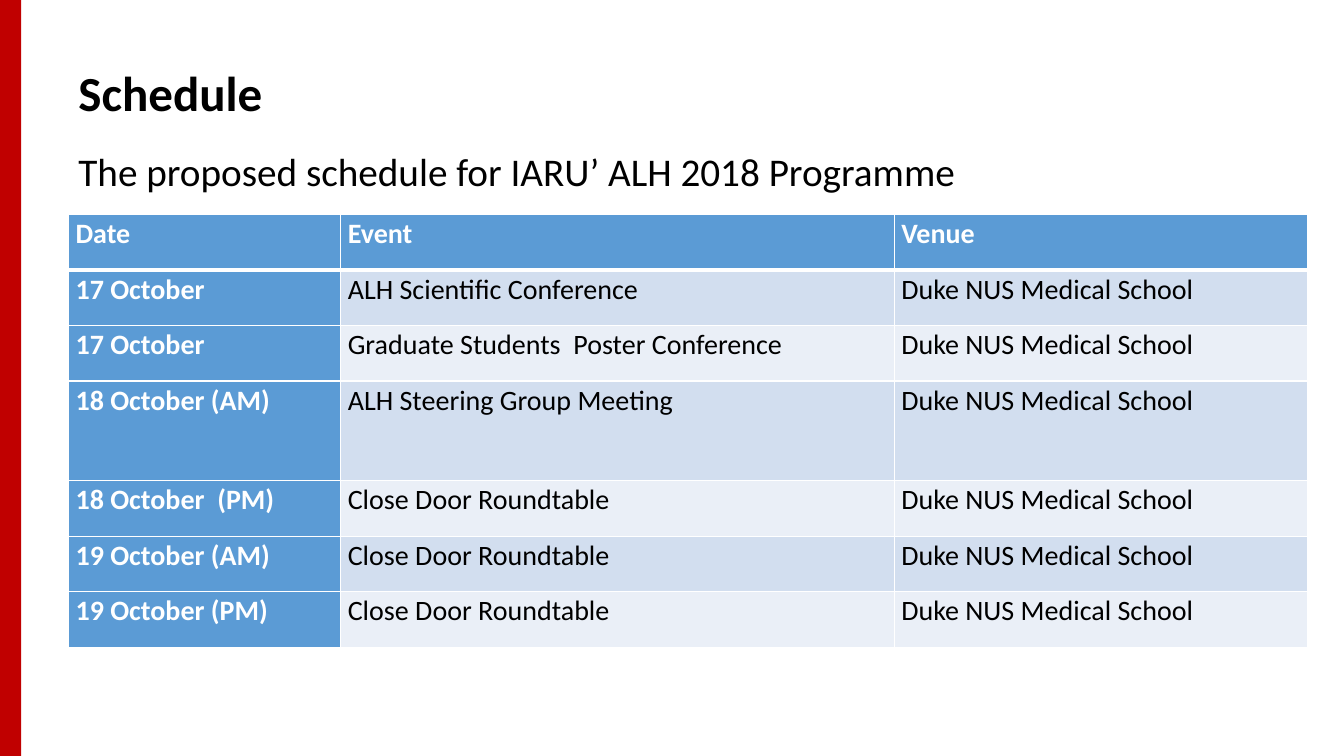
from lxml import etree
from pptx import Presentation
from pptx import util as u
from pptx.dml.color import RGBColor
from pptx.enum import shapes, text
from pptx.oxml import ns

RED = RGBColor(0xC0, 0x00, 0x00)
BLUE = RGBColor(0x5B, 0x9B, 0xD5)
BANDS = RGBColor(0xD2, 0xDE, 0xEF), RGBColor(0xEA, 0xEF, 0xF7)
WHITE = RGBColor(0xFF, 0xFF, 0xFF)
BLACK = RGBColor(0x00, 0x00, 0x00)

VENUE = "Duke NUS Medical School"
TALK = "Close Door Roundtable"
ROWS = [
    ("Date", "Event", "Venue"),
    ("17 October", "ALH Scientific Conference", VENUE),
    ("17 October", "Graduate Students  Poster Conference", VENUE),
    ("18 October (AM)", "ALH Steering Group Meeting", VENUE),
    ("18 October  (PM)", TALK, VENUE),
    ("19 October (AM)", TALK, VENUE),
    ("19 October (PM)", TALK, VENUE),
]
WIDTHS = 2.7, 5.49, 4.1
HEIGHTS = [0.99 if row[0] == "18 October (AM)" else 0.55 for row in ROWS]


def write(frame, words, size=20, color=BLACK, bold=False, space=1.07):
    par = frame.paragraphs[0]
    par.line_spacing = space
    run = par.add_run()
    run.text = words
    font = run.font
    font.name = "Calibri"
    font.size = u.Pt(size)
    font.bold = bold
    font.color.rgb = color


def edge(cell, side, width):
    props = cell._tc.get_or_add_tcPr()
    line = etree.SubElement(props, ns.qn("a:ln" + side), w=str(u.Pt(width)))
    fill = etree.SubElement(line, ns.qn("a:solidFill"))
    etree.SubElement(fill, ns.qn("a:srgbClr"), val=str(WHITE))


class Deck:
    def __init__(self, font_space=0.9):
        self.space = font_space
        self.prs = Presentation()
        self.prs.slide_width = u.Inches(13.33)
        self.prs.slide_height = u.Inches(7.5)
        self.slide = self.prs.slides.add_slide(self.prs.slide_layouts[6])

    def bar(self, *box, fill):
        bar = self.slide.shapes.add_shape(
            shapes.MSO_SHAPE.RECTANGLE, *map(u.Inches, box))
        bar.shadow.inherit = False
        bar.fill.solid()
        bar.fill.fore_color.rgb = fill
        bar.line.fill.background()

    def label(self, words, *box, anchor=text.MSO_ANCHOR.TOP, **style):
        frame = self.slide.shapes.add_textbox(*map(u.Inches, box)).text_frame
        frame.word_wrap = True
        frame.vertical_anchor = anchor
        write(frame, words, space=self.space, **style)

    def table(self, left, top):
        box = left, top, sum(WIDTHS), sum(HEIGHTS)
        grid = self.slide.shapes.add_table(
            len(ROWS), len(WIDTHS), *map(u.Inches, box)).table
        for col, width in zip(grid.columns, WIDTHS):
            col.width = u.Inches(width)
        for row, height in zip(grid.rows, HEIGHTS):
            row.height = u.Inches(height)
        for r, row in enumerate(ROWS):
            for c, words in enumerate(row):
                self.cell(grid.cell(r, c), words, r, c)

    def cell(self, cell, words, r, c):
        head = r == 0 or c == 0
        cell.margin_left = cell.margin_right = u.Inches(0.07)
        cell.margin_top = cell.margin_bottom = 0
        for side in "LRTB":
            thick = (r, side) in ((0, "B"), (1, "T"))
            edge(cell, side, 3 if thick else 1)
        cell.fill.solid()
        cell.fill.fore_color.rgb = BLUE if head else BANDS[(r - 1) % 2]
        write(cell.text_frame, words, bold=head,
              color=WHITE if head else BLACK)


def main():
    deck = Deck()
    deck.bar(0, 0, 0.21, 7.5, fill=RED)
    deck.label("Schedule", 0.68, 0.4, 11.5, 1.09,
               anchor=text.MSO_ANCHOR.MIDDLE, size=35, bold=True)
    deck.label("The proposed schedule for IARU’ ALH 2018 Programme",
               0.68, 1.47, 11.5, 4.76, size=28)
    deck.table(0.68, 2.13)
    deck.prs.save("out.pptx")


if __name__ == "__main__":
    main()
